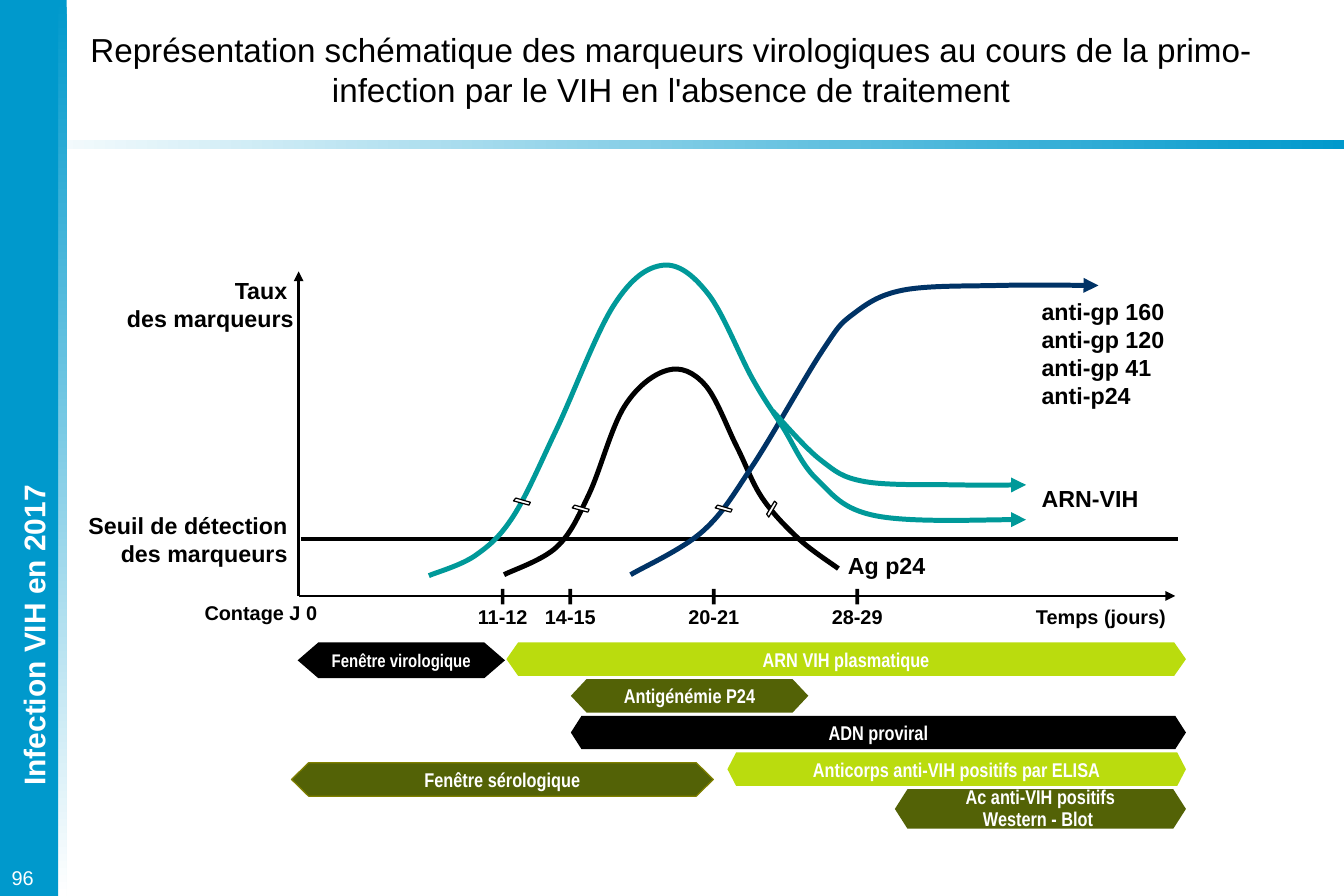
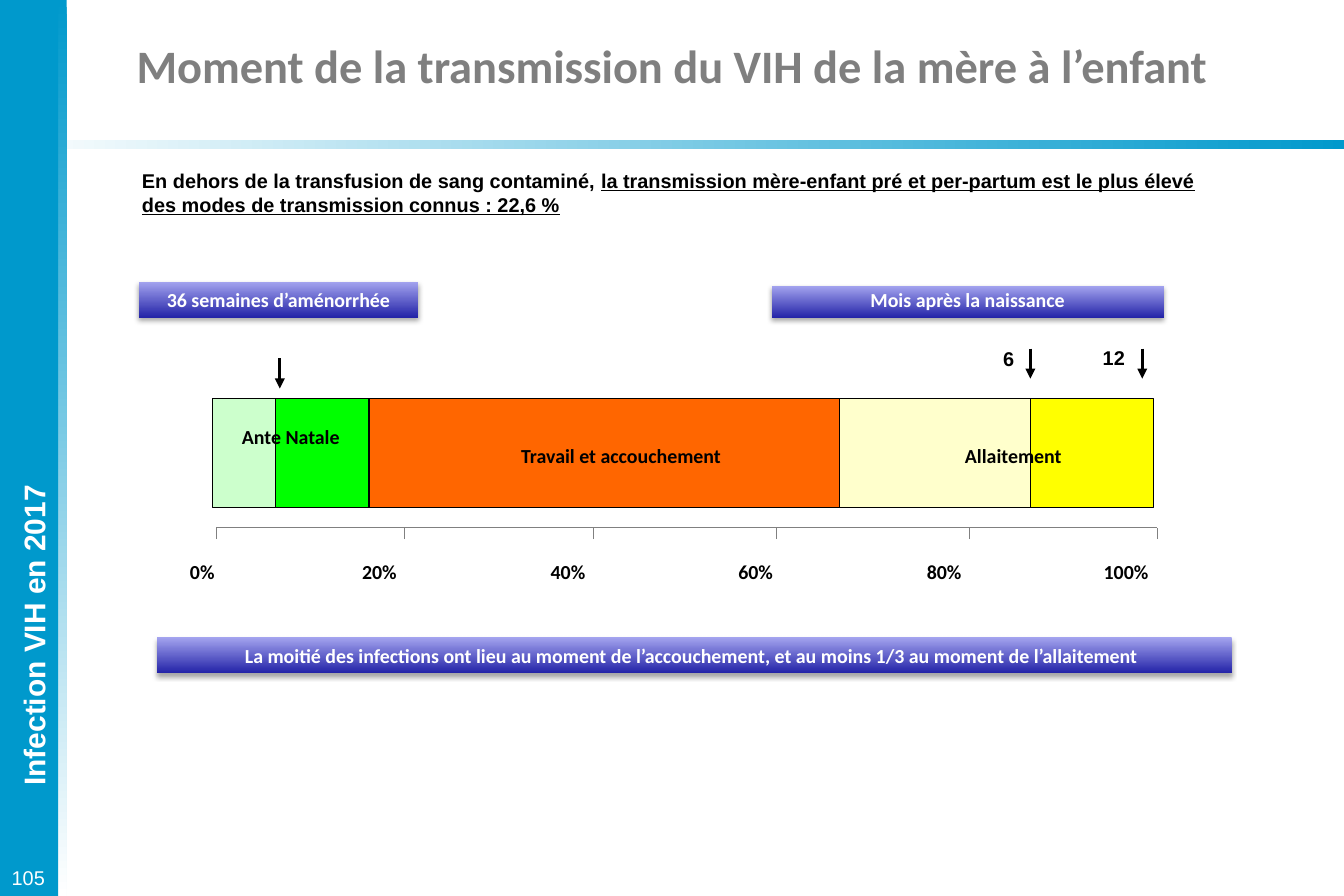
from dataclasses import dataclass

from lxml.etree import SubElement
from pptx import Presentation
from pptx.dml.color import RGBColor
from pptx.enum.shapes import MSO_CONNECTOR as Link, MSO_SHAPE as Kind
from pptx.enum.text import MSO_ANCHOR as Anchor, PP_ALIGN as Align
from pptx.oxml.ns import qn
from pptx.util import Cm, Pt


@dataclass(frozen=True)
class Theme:
    # Colours; a gradient is (first, last, counter-clockwise angle)
    black: str = "000000"
    white: str = "FFFFFF"
    blue: str = "0099CC"
    rule: tuple = ("FFFFFF", "0099CC", 0)
    fade: tuple = ("0099CC", "FFFFFF", 270)
    banner: tuple = ("A4A4EF", "2424A8", 270)
    grey: str = "7F7F7F"
    scale: str = "808080"
    olive: str = "536206"
    olive_edge: str = "808000"
    lime: str = "BADC0E"
    teal: str = "009999"
    navy: str = "003366"
    shares: tuple = ("CCFFCC", "00FF00", "FF6600", "FFFFCC", "FFFF00")
    # Fonts and type sizes
    sans: str = "Arial"
    narrow: str = "Arial Narrow"
    round: str = "Calibri"
    small: float = 11
    text: float = 12
    label: float = 14
    side: float = 18
    long_title: float = 20
    title: float = 28


theme = Theme()


def block(slide, x, y, w, h, fill=None, text="", size=theme.text, colour=theme.black,
          font=theme.sans, bold=True, align=Align.CENTER, kind=Kind.RECTANGLE,
          wrap=False, spacing=None, underlined=""):
    """Add a filled shape, or a text box when there is no fill."""
    place = Cm(x), Cm(y), Cm(w), Cm(h)
    if fill is None:
        shape = slide.shapes.add_textbox(*place)
    else:
        shape = slide.shapes.add_shape(kind, *place)
        shape.shadow.inherit = False
        shape.line.fill.background()
        if isinstance(fill, tuple):
            shape.fill.gradient()
            shape.fill.gradient_angle = fill[2]
            for stop, stop_colour in zip(shape.fill.gradient_stops, fill):
                stop.color.rgb = RGBColor.from_string(stop_colour)
        else:
            shape.fill.solid()
            shape.fill.fore_color.rgb = RGBColor.from_string(fill)
    if text:
        frame = shape.text_frame
        frame.text = text
        frame.word_wrap = wrap
        frame.vertical_anchor = Anchor.MIDDLE
        frame.margin_left = frame.margin_right = frame.margin_top = frame.margin_bottom = 0
        if underlined:
            run = frame.paragraphs[0].add_run()
            run.text = underlined
            run.font.underline = True
        for paragraph in frame.paragraphs:
            paragraph.alignment = align
            paragraph.line_spacing = spacing
            for run in paragraph.runs:
                run.font.name, run.font.size, run.font.bold = font, Pt(size), bold
                run.font.color.rgb = RGBColor.from_string(colour)
    return shape


def stroke(item, colour, width, head=False):
    """Give a connector or an outline its colour, width and arrowhead."""
    item.line.color.rgb = RGBColor.from_string(colour)
    item.line.width = Pt(width)
    properties = item._element.spPr
    if head:
        SubElement(properties.find(qn("a:ln")), qn("a:tailEnd"), type="triangle")
    if properties.find(qn("a:effectLst")) is None:
        SubElement(properties, qn("a:effectLst"))


deck = Presentation()
deck.slide_width, deck.slide_height = Cm(28.58), Cm(19.05)

# Shared bands, side label, page number and title
pages = []
for number, title, title_top, title_style in [
    ("96", "Représentation schématique des marqueurs virologiques au cours de la "
           "primo-infection par le VIH en l'absence de traitement",
     0.48, dict(size=theme.long_title, bold=False)),
    ("105", "Moment de la transmission du VIH de la mère à l’enfant",
     0.39, dict(size=theme.title, colour=theme.grey, font=theme.round)),
]:
    page = deck.slides.add_slide(deck.slide_layouts[6])
    block(page, 0, 2.97, 28.58, 0.2, theme.rule)
    block(page, 0.18, 0, 1.24, 19.05, theme.fade)
    block(page, 0, 0, 1.24, 19.05, theme.blue)
    side_label = block(page, -2.77, 13, 6.96, 1.02, text="Infection VIH en 2017",
                       size=theme.side, colour=theme.white)
    side_label.rotation = 270
    block(page, 0.25, 18.4, 1.1, 0.51, text=number, colour=theme.white, bold=False,
          align=Align.LEFT)
    block(page, 1.68, title_top, 25.2, 2, text=title, wrap=True, **title_style)
    pages.append(page)
markers, transmission = pages

# Markers: detection threshold and axes
for x1, y1, x2, y2, width, head in [
    (6.4, 11.46, 25.04, 11.46, 2, False),
    (6.35, 12.67, 6.35, 5.77, 1.5, True),
    (6.35, 12.67, 24.99, 12.67, 1.5, True),
]:
    line = markers.shapes.add_connector(Link.STRAIGHT, Cm(x1), Cm(y1), Cm(x2), Cm(y2))
    stroke(line, theme.black, width, head)

# Markers: curves through their knots (cm)
antigen = [(10.72, 12.22), (11.84, 11.63), (12.52, 10.52), (13.28, 8.64), (14.2, 7.87),
           (14.99, 8.18), (15.67, 9.5), (16.21, 10.59), (16.99, 11.46), (17.83, 12.09)]
antibodies = [(13.41, 12.22), (14.94, 11.3), (16, 9.91), (17.48, 7.47), (18.14, 6.68),
              (19.2, 6.17), (21.23, 6.07), (23.36, 6.07)]
rna = [(9.12, 12.24), (10.11, 11.81), (10.92, 10.97), (11.84, 9.12), (13.06, 6.48),
       (14.1, 5.64), (15.06, 6.25), (16, 8.05), (16.64, 9.07), (17.37, 10.19),
       (18.64, 10.97), (21.82, 11.05)]
rna_branch = [(16.43, 8.74), (17.45, 9.78), (18.39, 10.24), (20.37, 10.31), (21.82, 10.31)]
for knots, colour, head in [
    (antigen, theme.black, False),
    (antibodies, theme.navy, True),
    (rna, theme.teal, True),
    (rna_branch, theme.teal, True),
]:
    points = [(Cm(x), Cm(y)) for x, y in knots]
    outline = markers.shapes.build_freeform(*points[0])
    outline.add_line_segments(points[1:], close=False)
    curve = outline.convert_to_shape()
    curve.fill.background()
    stroke(curve, colour, 3, head)
    # Bend each segment: its handles follow the neighbouring knots
    padded = [points[0], *points, points[-1]]
    segments = list(curve._element.iter(qn("a:lnTo")))
    for segment, *four in zip(segments, padded, padded[1:], padded[2:], padded[3:]):
        before, start, end, after = four
        segment.tag = qn("a:cubicBezTo")
        leaving = [s + (e - b) / 6 for b, s, e in zip(before, start, end)]
        arriving = [e - (a - s) / 6 for s, e, a in zip(start, end, after)]
        for position, (x, y) in enumerate([leaving, arriving]):
            handle = SubElement(segment, qn("a:pt"), x=str(round(x - curve.left)),
                                y=str(round(y - curve.top)))
            segment.insert(position, handle)

# Markers: break marks on the curves
for x, y, turn in [(10.92, 10.59, 0), (12.17, 10.74, 0), (15.21, 10.74, 0), (16.23, 10.75, 285)]:
    corners = [(Cm(x + dx), Cm(y + dy))
               for dx, dy in [(0.36, 0.09), (0.05, 0), (0, 0.06), (0.33, 0.15)]]
    outline = markers.shapes.build_freeform(*corners[0])
    outline.add_line_segments(corners[1:], close=True)
    break_mark = outline.convert_to_shape()
    break_mark.fill.solid()
    break_mark.fill.fore_color.rgb = RGBColor.from_string(theme.white)
    break_mark.rotation = turn
    stroke(break_mark, theme.black, 0.75)

# Markers: days on the time axis
for days, x in [("11-12", 10.69), ("14-15", 12.13), ("20-21", 15.18), ("28-29", 18.23)]:
    block(markers, x - 0.04, 12.52, 0.08, 0.33, theme.black)
    block(markers, x - 0.6, 12.85, 1.2, 0.51, text=days)

# Markers: axis and curve labels
for text, x, y, w, h, size, align in [
    ("Taux \vdes marqueurs ", 2.67, 5.87, 3.58, 1.19, theme.label, Align.RIGHT),
    ("Seuil de détection\vdes marqueurs", 1.72, 10.87, 4.4, 1.19, theme.label, Align.RIGHT),
    ("anti-gp 160\nanti-gp 120\nanti-gp 41\nanti-p24", 22.15, 6.31, 2.8, 2.39,
     theme.label, Align.LEFT),
    ("ARN-VIH", 22.15, 10.29, 2.3, 0.61, theme.label, Align.LEFT),
    ("Ag p24", 18.03, 11.71, 1.9, 0.61, theme.label, Align.LEFT),
    ("Contage J 0", 4.35, 12.78, 2.6, 0.51, theme.text, Align.LEFT),
    ("Temps (jours)", 22.03, 12.85, 3, 0.51, theme.text, Align.LEFT),
]:
    block(markers, x, y, w, h, text=text, size=size, align=align)

# Markers: detection periods, one row apart
FIRST_ROW, ROW_STEP, LAST_DAY = 13.66, 0.78, 25.22
for text, row, left, right, height, point, fill, size, edge, spacing in [
    ("Fenêtre virologique", 0, 6.33, 10.74, 0.76, 0.58, theme.black, theme.small, None, None),
    ("ARN VIH plasmatique", 0, 10.77, LAST_DAY, 0.71, 0.35, theme.lime, theme.text, None, None),
    ("Antigénémie P24", 1, 12.14, 17.19, 0.71, 0.47, theme.olive, theme.text, None, None),
    ("ADN proviral", 2, 12.14, LAST_DAY, 0.71, 0.32, theme.black, theme.text, None, None),
    ("Anticorps anti-VIH positifs par ELISA", 3, 15.47, LAST_DAY, 0.71, 0.26, theme.lime,
     theme.text, None, None),
    ("Fenêtre sérologique", 3.28, 6.2, 15.17, 0.71, 0.51, theme.olive, theme.text,
     theme.olive_edge, None),
    ("Ac anti-VIH positifs\vWestern - Blot ", 4, 19.03, LAST_DAY, 0.84, 0.32, theme.olive,
     theme.text, None, 0.9),
]:
    period = block(markers, left, FIRST_ROW + row * ROW_STEP, right - left, height, fill, text,
                   size, theme.white, theme.narrow, kind=Kind.LEFT_RIGHT_ARROW, spacing=spacing)
    period.adjustments[0], period.adjustments[1] = 1, point
    if edge:
        stroke(period, edge, 0.75)

# Transmission: introduction
block(transmission, 3.02, 3.58, 23.22, 1.02, align=Align.LEFT, wrap=True,
      text="En dehors de la transfusion de sang contaminé, ",
      underlined="la transmission mère-enfant pré et per-partum est le plus élevé "
                 "des modes de transmission connus : 22,6 %")

# Transmission: share of each period
edges = [4.52, 5.86, 7.85, 17.86, 21.92, 24.53]
for left, right, fill in zip(edges, edges[1:], theme.shares):
    share = block(transmission, left, 8.47, right - left, 2.33, fill)
    stroke(share, theme.black, 0.75)
for text, x, y, w in [
    ("Ante Natale", 4.52, 8.9, 3.33),
    ("Travail et accouchement", 7.85, 9.31, 10.72),
    ("Allaitement", 19.05, 9.31, 5),
]:
    block(transmission, x, y, w, 0.76, text=text, font=theme.round)

# Transmission: percentage scale and time arrows
SCALE_TOP, TICK = 11.22, 0.24
ticks = [4.6, 8.6, 12.62, 16.51, 20.62, 24.61]
label_lefts = [4.04, 7.7, 11.71, 15.7, 19.71, 23.47]
scale_lines = [(ticks[0], SCALE_TOP, ticks[-1], SCALE_TOP, theme.scale, 0.75, False)]
for i, (x, label_left) in enumerate(zip(ticks, label_lefts)):
    scale_lines.append((x, SCALE_TOP + TICK, x, SCALE_TOP, theme.scale, 0.75, False))
    block(transmission, label_left, 11.9, 1.1, 0.51, text=f"{20 * i}%", font=theme.round,
          align=Align.LEFT)
time_arrows = [(x, y, x, y + 0.64, theme.black, 2, True)
               for x, y in [(5.95, 7.62), (21.91, 7.41), (24.29, 7.41)]]
for x1, y1, x2, y2, colour, width, head in scale_lines + time_arrows:
    line = transmission.shapes.add_connector(Link.STRAIGHT, Cm(x1), Cm(y1), Cm(x2), Cm(y2))
    stroke(line, colour, width, head)
for months, x, y in [("6", 21.33, 7.37), ("12", 23.45, 7.35)]:
    block(transmission, x, y, 0.6, 0.51, text=months, align=Align.LEFT)

# Transmission: banners with a soft shadow
for text, x, y, w, h, spacing in [
    ("36 semaines d’aménorrhée", 2.95, 5.99, 5.95, 0.76, None),
    ("Mois après la naissance", 16.41, 6.08, 8.34, 0.68, 0.8),
    ("La moitié des infections ont lieu au moment de l’accouchement, "
     "et au moins 1/3 au moment de l’allaitement ", 3.33, 13.55, 22.86, 0.76, None),
]:
    banner = block(transmission, x, y, w, h, theme.banner, text, colour=theme.white,
                   font=theme.round, spacing=spacing)
    effects = banner._element.spPr.find(qn("a:effectLst"))
    shadow = SubElement(effects, qn("a:outerShdw"), blurRad=str(Pt(3.1)), dist=str(Pt(1.8)),
                        dir="5400000", rotWithShape="0")
    shade = SubElement(shadow, qn("a:srgbClr"), val=theme.black)
    SubElement(shade, qn("a:alpha"), val="35000")

deck.save("out.pptx")
